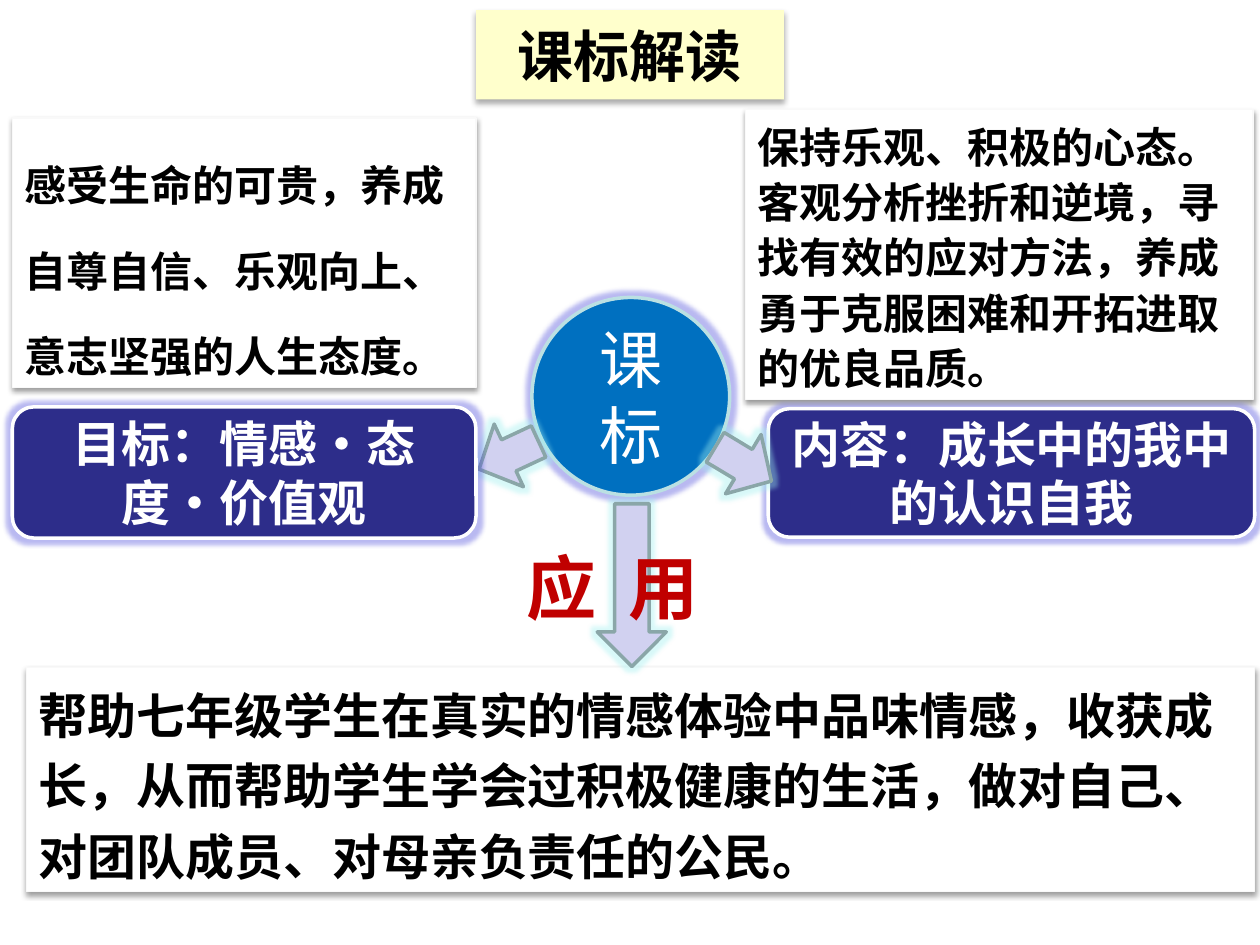
from lxml import etree
from pptx import Presentation
from pptx import util as u
from pptx.dml.color import RGBColor
from pptx.enum import lang, shapes, text
from pptx.oxml import ns

FONT = "Noto Sans CJK SC"
BLACK = RGBColor(0x00, 0x00, 0x00)
WHITE = RGBColor(0xFF, 0xFF, 0xFF)
CREAM = RGBColor(0xFF, 0xFF, 0xCC)
PALE = RGBColor(0xF9, 0xF9, 0xF9)
BLUE = RGBColor(0x00, 0x70, 0xC0)
NAVY = RGBColor(0x2D, 0x2D, 0x8A)
LILAC = RGBColor(0xD1, 0xD1, 0xF0)
AQUA = RGBColor(0xBB, 0xE0, 0xE3)
TEAL = RGBColor(0x8A, 0xA6, 0xA8)
RED = RGBColor(0xC0, 0x00, 0x00)
VIOLET = RGBColor(0x50, 0x50, 0xDC)
CYAN = RGBColor(0xA0, 0xF0, 0xF0)

KIND = shapes.MSO_SHAPE
FIT = text.MSO_AUTO_SIZE
TOP, MID = text.MSO_ANCHOR.TOP, text.MSO_ANCHOR.MIDDLE
LEFT, CENTER = text.PP_ALIGN.LEFT, text.PP_ALIGN.CENTER


class Board:
    def __init__(self, slide, face):
        self.slide = slide
        self.face = face

    def letter(self, shape, words, size, color, bold=True, align=LEFT,
               anchor=TOP, fit=FIT.NONE, lead=None):
        """Put styled words into the shape."""
        frame = shape.text_frame
        frame.text = words
        para = frame.paragraphs[0]
        font = para.runs[0].font
        font.color.rgb = color
        formats = (
            (frame, {"word_wrap": True, "vertical_anchor": anchor, "auto_size": fit}),
            (para, {"alignment": align, "line_spacing": lead}),
            (font, {"name": self.face, "size": u.Pt(size), "bold": bold,
                    "language_id": lang.MSO_LANGUAGE_ID.SIMPLIFIED_CHINESE}),
        )
        for item, values in formats:
            for key, value in values.items():
                setattr(item, key, value)
        # East Asian glyphs take their own typeface element
        latin = font._element.find(ns.qn("a:latin"))
        latin.addnext(etree.Element(ns.qn("a:ea"), typeface=self.face))

    def place(self, shape, box):
        for key, value in zip(("left", "top", "width", "height"), box):
            setattr(shape, key, u.Pt(value))

    def effect(self, shape, kind, color, alpha, **sizes):
        """Add an outer shadow or a glow; sizes are the element's attributes."""
        shape.shadow.inherit = False
        holder = shape._element.spPr.find(ns.qn("a:effectLst"))
        node = etree.SubElement(holder, ns.qn("a:" + kind),
                                {key: str(value) for key, value in sizes.items()})
        tint = etree.SubElement(node, ns.qn("a:srgbClr"), val=str(color))
        etree.SubElement(tint, ns.qn("a:alpha"), val=str(alpha * 1000))

    def shade(self, shape, alpha, blur, dist):
        self.effect(shape, "outerShdw", BLACK, alpha, blurRad=u.Pt(blur),
                    dist=u.Pt(dist), dir=90 * 60000, algn="t", rotWithShape=0)

    def shape(self, kind, box, fill, line, width):
        shape = self.slide.shapes.add_shape(kind, *map(u.Pt, box))
        shape.fill.solid()
        shape.fill.fore_color.rgb = fill
        shape.line.color.rgb = line
        shape.line.width = u.Pt(width)
        return shape

    def title(self, box, words):
        shape = self.slide.shapes.title
        self.place(shape, box)
        shape.fill.solid()
        shape.fill.fore_color.rgb = CREAM
        self.shade(shape, 32, 3.5, 2.2)
        self.letter(shape, words, 32, BLACK, align=CENTER, anchor=MID)

    def panel(self, box, words, size, lead):
        shape = self.shape(KIND.RECTANGLE, box, WHITE, PALE, 0.75)
        self.shade(shape, 38, 3.1, 1.6)
        self.letter(shape, words, size, BLACK, fit=FIT.SHAPE_TO_FIT_TEXT, lead=lead)

    def badge(self, kind, box, words, size, fill, line, bold):
        shape = self.shape(kind, box, fill, line, 2)
        self.effect(shape, "glow", VIOLET, 40, rad=u.Pt(5))
        self.letter(shape, words, size, WHITE, bold, CENTER, MID)

    def arrow(self, kind, box, turn):
        shape = self.shape(kind, box, LILAC, TEAL, 2)
        shape.rotation = turn
        self.effect(shape, "glow", CYAN, 40, rad=u.Pt(5))

    def label(self, box, words):
        shape = self.slide.shapes.add_textbox(*map(u.Pt, box))
        self.letter(shape, words, 40, RED, fit=FIT.SHAPE_TO_FIT_TEXT)


def main():
    deck = Presentation()
    deck.slide_width, deck.slide_height = u.Pt(720), u.Pt(540)
    board = Board(deck.slides.add_slide(deck.slide_layouts[5]), FONT)

    board.title((272, 5.8, 176, 51), "课标解读")
    board.panel((426, 62.8, 290, 165.6),
                "保持乐观、积极的心态。客观分析挫折和逆境，寻找有效的应对方法，"
                "养成勇于克服困难和开拓进取的优良品质。", 24, 1.1)
    board.panel((15, 381.4, 702, 128),
                "帮助七年级学生在真实的情感体验中品味情感，收获成长，从而帮助学生"
                "学会过积极健康的生活，做对自己、对团队成员、对母亲负责任的公民。", 28, 1.2)
    board.panel((7, 67.5, 265, 154),
                "感受生命的可贵，养成自尊自信、乐观向上、意志坚强的人生态度。", 24, 1.7)

    board.badge(KIND.OVAL, (304, 170, 113, 113), "课标", 36, BLUE, AQUA, False)
    board.arrow(KIND.LEFT_ARROW, (272, 240.5, 37.5, 39.5), 335)
    board.arrow(KIND.RIGHT_ARROW, (314.5, 314.6, 93, 39.5), 90)
    board.badge(KIND.ROUNDED_RECTANGLE, (7, 232.5, 265, 75),
                "目标：情感·态度·价值观", 28, NAVY, WHITE, True)
    board.badge(KIND.ROUNDED_RECTANGLE, (439, 233.5, 278, 73.5),
                "内容：成长中的我中的认识自我", 28, NAVY, WHITE, True)
    board.label((294, 307.5, 160.5, 55.5), "应  用")
    board.arrow(KIND.RIGHT_ARROW, (406, 245.5, 37.5, 39.5), 31)

    deck.save("out.pptx")


if __name__ == "__main__":
    main()
